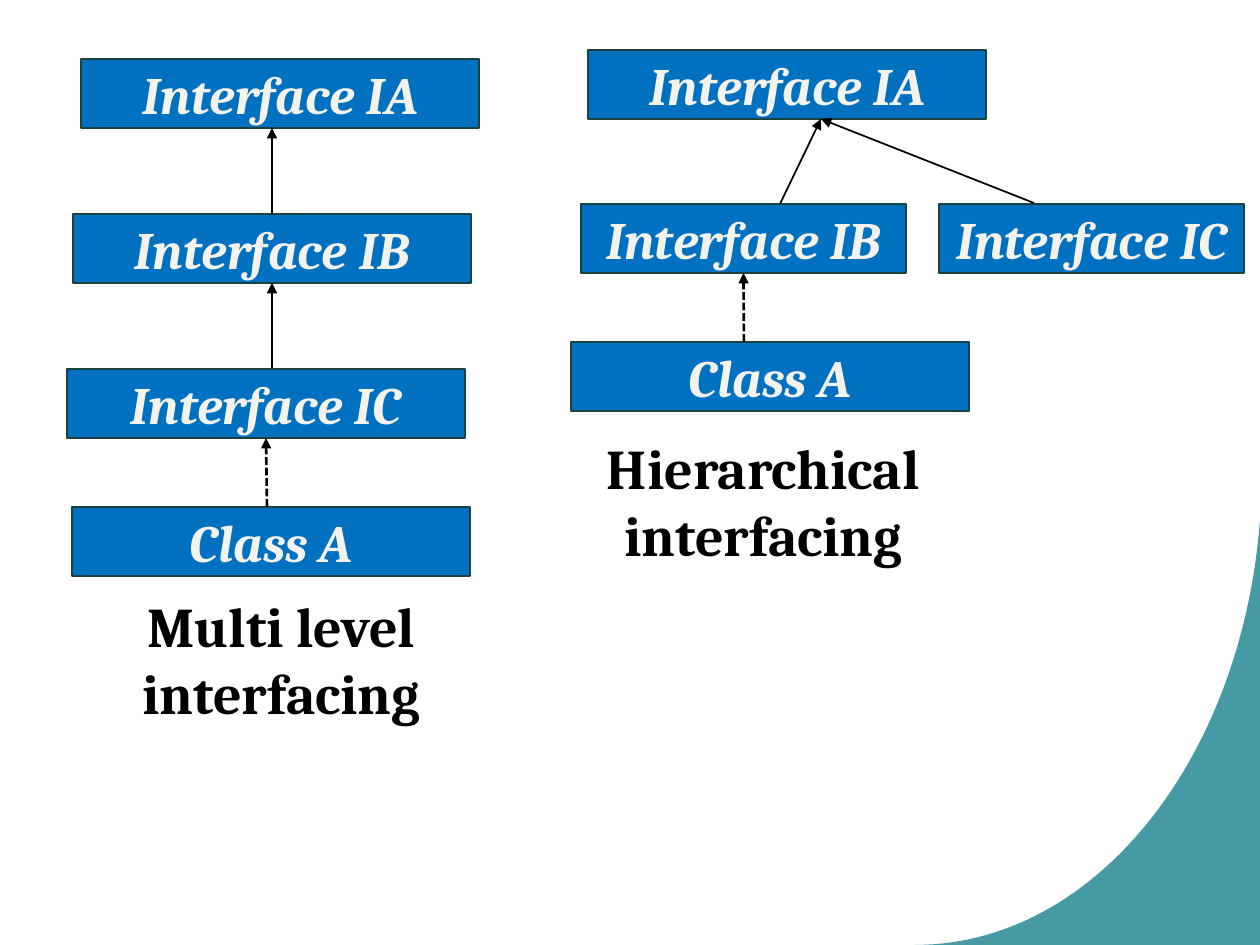
from lxml import etree
from pptx import Presentation, util as u
from pptx.dml.color import RGBColor
from pptx.enum import dml, shapes, text
from pptx.oxml.ns import qn

PX = u.Inches(1) // 126
BOX_HEIGHT = 69


def color(fill, hex_value):
    """Make a fill solid in the given colour."""
    fill.solid()
    fill.fore_color.rgb = RGBColor.from_string(hex_value)


def write(shape, words, size, hex_value, italic):
    """Put one centred bold line of text into a shape."""
    shape.text_frame.text = words
    shape.text_frame.word_wrap = True
    paragraph = shape.text_frame.paragraphs[0]
    paragraph.alignment = text.PP_ALIGN.CENTER
    font = paragraph.runs[0].font
    font.name, font.size, font.bold, font.italic = "Cambria", u.Pt(size), True, italic
    color(font.fill, hex_value)


presentation = Presentation()
presentation.slide_width, presentation.slide_height = 1260 * PX, 945 * PX
slide = presentation.slides.add_slide(presentation.slide_layouts[6])

# Corner: a Bezier curve sampled from the bottom edge up to the right edge
curve = [(915, 945), (1095, 945), (1242, 759), (1260, 520)]
weights = [((1 - t) ** 3, 3 * t * (1 - t) ** 2, 3 * t ** 2 * (1 - t), t ** 3)
           for t in (step / 60 for step in range(61))]
points = [tuple(round(sum(w * point[axis] for w, point in zip(weight, curve)) * PX)
                for axis in (0, 1)) for weight in weights]
builder = slide.shapes.build_freeform(*points[0])
builder.add_line_segments(points[1:] + [(1260 * PX, 945 * PX)], close=True)
corner = builder.convert_to_shape()
corner.shadow.inherit = False
color(corner.fill, "18818C")
corner.line.fill.background()
corner_color = corner.fill._xPr.find(qn("a:solidFill"))[0]
etree.SubElement(corner_color, qn("a:alpha"), val="80000")

# Boxes: key, label, left, top, width
boxes = {}
for key, label, left, top, width in [
    ("multi A", "Interface IA", 81, 59, 398),
    ("multi B", "Interface IB", 73, 214, 398),
    ("multi C", "Interface IC", 67, 369, 398),
    ("multi class", "Class A", 72, 507, 398),
    ("tree A", "Interface IA", 588, 50, 398),
    ("tree B", "Interface IB", 581, 204, 325),
    ("tree C", "Interface IC", 939, 204, 305),
    ("tree class", "Class A", 571, 342, 398),
]:
    box = slide.shapes.add_shape(shapes.MSO_SHAPE.RECTANGLE, left * PX, top * PX,
                                 width * PX, BOX_HEIGHT * PX)
    box.shadow.inherit = False
    color(box.fill, "0070C0")
    color(box.line.fill, "1A433F")
    box.line.width = u.Pt(1)
    box.text_frame.vertical_anchor = text.MSO_ANCHOR.MIDDLE
    write(box, label, 30, "F4F2EC", True)
    boxes[key] = box

# Arrows: start, end, dashed, box joined at its top, box joined at its bottom
for start, end, dashed, begin_box, end_box in [
    ((272, 214), (272, 128), False, "multi B", None),
    ((272, 368), (272, 283), False, None, "multi B"),
    ((267, 507), (267, 438), True, None, "multi C"),
    ((780, 204), (821, 119), False, None, None),
    ((1034, 203), (821, 119), False, None, None),
    ((744, 342), (744, 273), True, None, "tree B"),
]:
    arrow = slide.shapes.add_connector(shapes.MSO_CONNECTOR.STRAIGHT,
                                       *(value * PX for value in start + end))
    if begin_box:
        arrow.begin_connect(boxes[begin_box], 0)
    if end_box:
        arrow.end_connect(boxes[end_box], 2)
    color(arrow.line.fill, "000000")
    arrow.line.width = u.Pt(1.5 if dashed else 1)
    if dashed:
        arrow.line.dash_style = dml.MSO_LINE.SQUARE_DOT
    etree.SubElement(arrow.line._get_or_add_ln(), qn("a:tailEnd"), type="triangle")
    etree.SubElement(arrow._element.spPr, qn("a:effectLst"))

for words, left, top in [("Multi level interfacing", 47, 585),
                         ("Hierarchical interfacing", 529, 427)]:
    caption = slide.shapes.add_textbox(left * PX, top * PX, 469 * PX, 149 * PX)
    write(caption, words, 32, "000000", False)

presentation.save("out.pptx")
